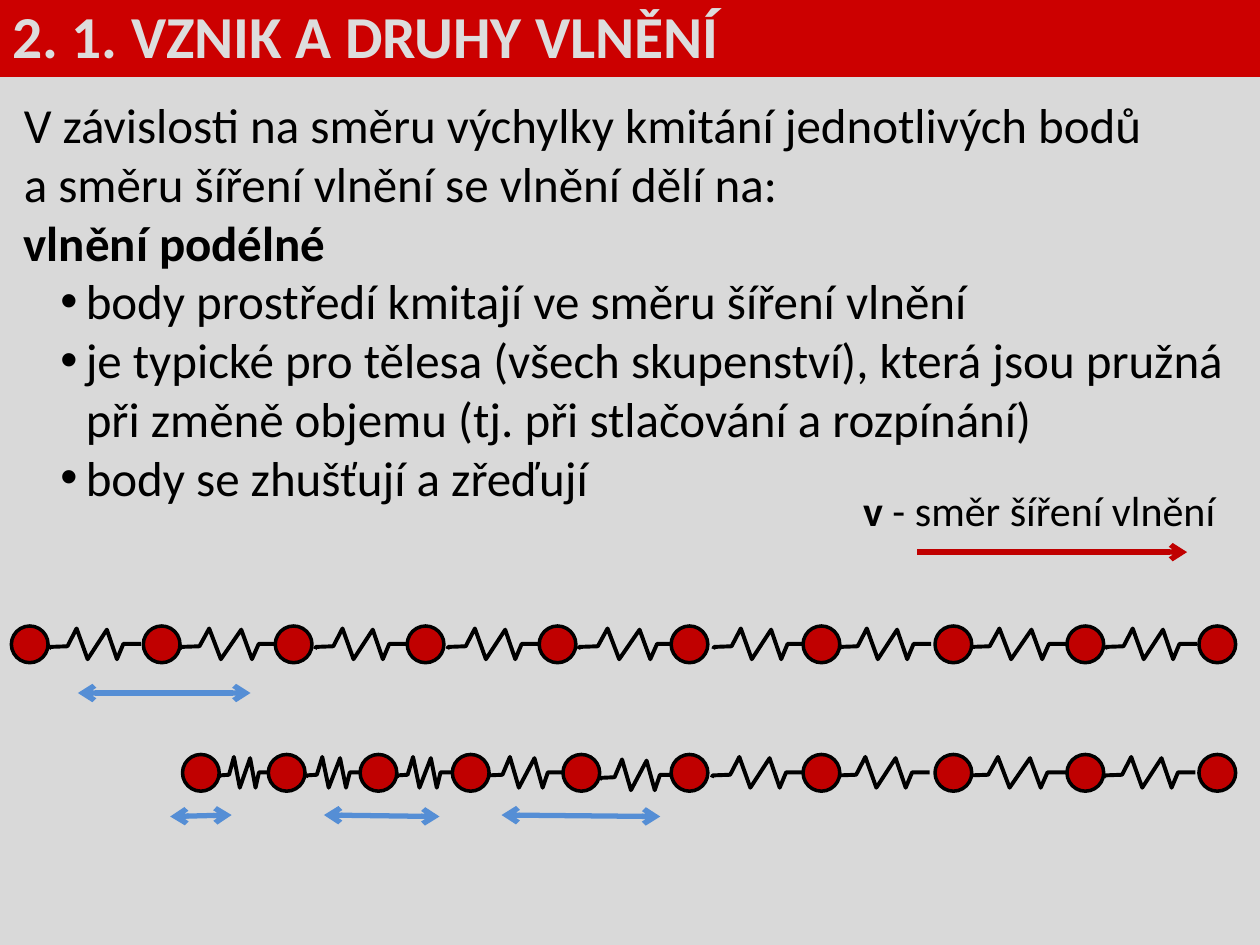
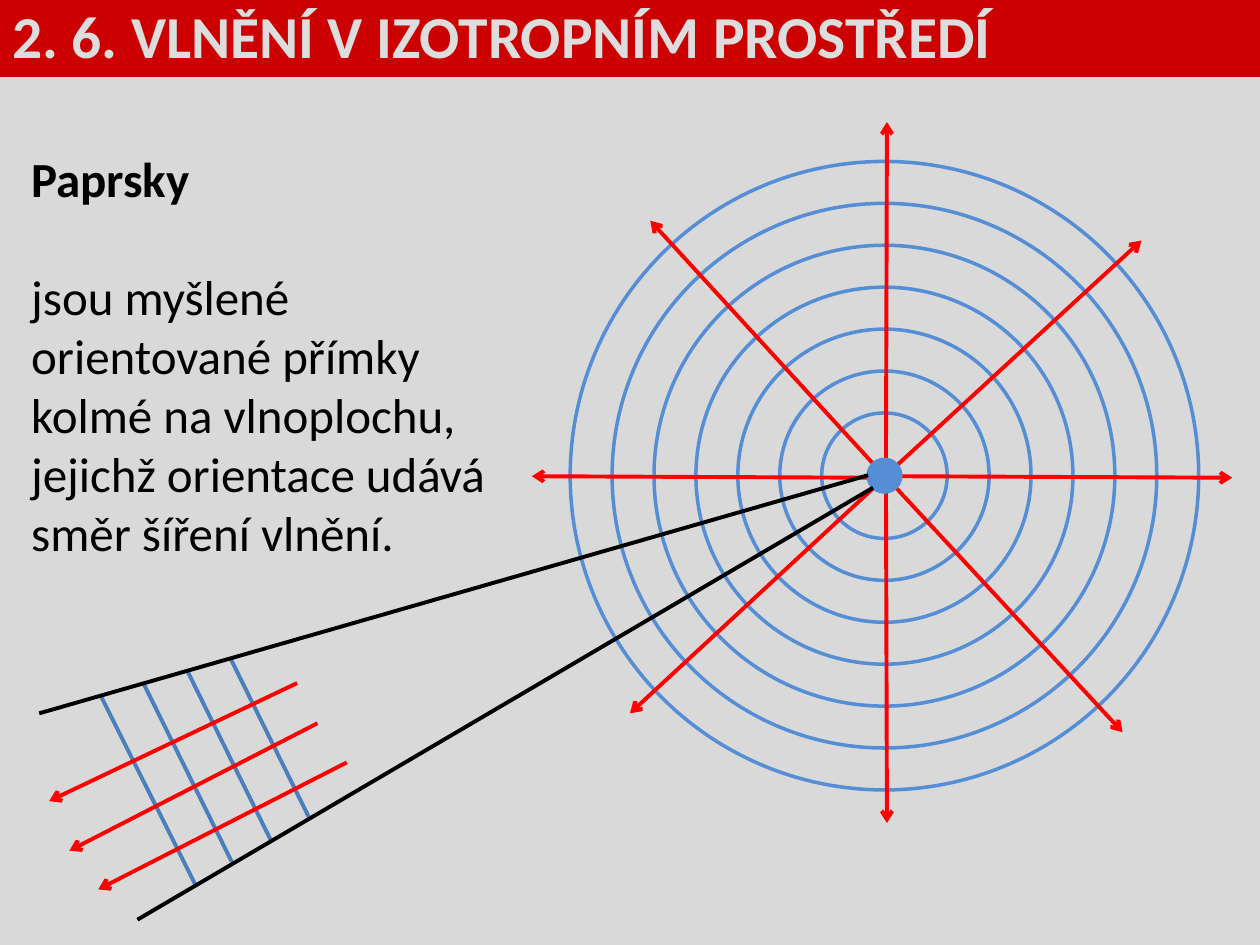
from lxml.etree import SubElement
from pptx import Presentation
from pptx.dml.color import RGBColor
from pptx.enum.shapes import MSO_CONNECTOR as Link, MSO_SHAPE as Preset
from pptx.enum.text import MSO_ANCHOR as Anchor, PP_ALIGN as Align
from pptx.oxml.ns import qn
from pptx.util import Cm, Pt

COLORS = {
    "page": "D9D9D9", "band": "CC0000", "title": "DDDDDD", "text": "000000",
    "ball": "C00000", "wave": "558ED5", "front": "4B7EBC", "ray": "FF0000",
}
FONT = "Calibri"
BODY_SIZE = 28

# One spring, as fractions of its width and height
SPRING = [(0, .67), (.01, .6), (.2, .58), (.3, 0), (.42, 1),
          (.63, .04), (.74, 1), (.81, .5), (1, .5)]
SPRING_HEIGHT = 0.62
BALL_SIZE = 0.74
# Offset and width of the springs in a relaxed run of three
RELAXED = [(0, 1.85), (2.64, 1.96), (5.36, 1.85)]


def rgb(name):
    return RGBColor.from_string(COLORS[name])


class Sketch:
    """Holds the deck, its style and the page being drawn; lengths are in cm."""

    def __init__(self):
        self.deck = Presentation()
        self.deck.slide_width, self.deck.slide_height = Cm(25.4), Cm(19.05)
        self.page = None

    def new_page(self, title):
        self.page = self.deck.slides.add_slide(self.deck.slide_layouts[6])
        fill = self.page.background.fill
        fill.solid()
        fill.fore_color.rgb = rgb("page")
        band = self.shape(Preset.RECTANGLE, 0, -0.15, 25.4, 1.7, fill="band")
        frame = band.text_frame
        frame.word_wrap = True
        frame.vertical_anchor = Anchor.MIDDLE
        para = frame.paragraphs[0]
        para.alignment = Align.LEFT
        self.span(para, title, 34, bold=True, color="title")

    def shape(self, preset, left, top, width, height, fill=None, line=None):
        shape = self.page.shapes.add_shape(
            preset, Cm(left), Cm(top), Cm(width), Cm(height))
        return self.paint(shape, fill, line, 2)

    def paint(self, shape, fill, line, weight):
        shape.shadow.inherit = False
        if fill:
            shape.fill.solid()
            shape.fill.fore_color.rgb = rgb(fill)
        else:
            shape.fill.background()
        if line:
            shape.line.color.rgb = rgb(line)
            shape.line.width = Pt(weight)
        else:
            shape.line.fill.background()
        return shape

    def circle(self, x, y, size, fill=None, line="text"):
        """Draw a circle around the centre x, y."""
        return self.shape(Preset.OVAL, x - size / 2, y - size / 2, size, size, fill, line)

    def spring(self, left, top, width):
        points = [(Cm(left + x * width), Cm(top + y * SPRING_HEIGHT)) for x, y in SPRING]
        builder = self.page.shapes.build_freeform(*points[0])
        builder.add_line_segments(points[1:], close=False)
        self.paint(builder.convert_to_shape(), None, "text", 2.25)

    def chain(self, y, ball_centers, springs):
        """Draw springs (left, width, drop) and the balls they join."""
        for left, width, drop in springs:
            self.spring(left, y - 0.32 + drop, width)
        for x in ball_centers:
            self.circle(x, y, BALL_SIZE, fill="ball")

    def line(self, ends, color, weight=2.25, heads=()):
        """Draw a line; heads names its arrowed ends, headEnd before tailEnd."""
        line = self.page.shapes.add_connector(Link.STRAIGHT, *map(Cm, ends))
        line.line.color.rgb = rgb(color)
        line.line.width = Pt(weight)
        outline = line.line._get_or_add_ln()
        for head in heads:
            SubElement(outline, qn("a:" + head)).set("type", "arrow")
        SubElement(line._element.spPr, qn("a:effectLst"))

    def arrow(self, ends, color, weight=2.25):
        self.line(ends, color, weight, ["tailEnd"])

    def span(self, para, text, size=BODY_SIZE, bold=False, color="text"):
        span = para.add_run()
        span.text = text
        font = span.font
        font.name, font.size, font.bold = FONT, Pt(size), bold
        font.color.rgb = rgb(color)

    def textbox(self, left, top, width, height):
        box = self.page.shapes.add_textbox(Cm(left), Cm(top), Cm(width), Cm(height))
        box.text_frame.word_wrap = True
        return box.text_frame

    def bullet(self, frame, text):
        para = frame.add_paragraph()
        para.level = 1
        props = para._p.get_or_add_pPr()
        props.set("marL", str(Cm(1.25)))
        props.set("indent", str(Cm(-0.51)))
        SubElement(props, qn("a:buFont")).set("typeface", "Arial")
        SubElement(props, qn("a:buChar")).set("char", "•")
        self.span(para, text)


def relaxed_springs(start):
    return [(start + offset, width, 0) for offset, width in RELAXED]


def draw_longitudinal_wave(sketch):
    sketch.new_page("2. 1. VZNIK A DRUHY VLNĚNÍ")
    frame = sketch.textbox(0.23, 1.78, 25.17, 8.64)
    para = frame.paragraphs[0]
    sketch.span(para, "V závislosti na směru výchylky kmitání jednotlivých bodů ")
    para.add_line_break()
    sketch.span(para, "a směru šíření vlnění se vlnění dělí na:")
    sketch.span(frame.add_paragraph(), "vlnění podélné", bold=True)
    for text in (
        "body prostředí kmitají ve směru šíření vlnění",
        "je typické pro tělesa (všech skupenství), která jsou pružná "
        "při změně objemu (tj. při stlačování a rozpínání)",
        "body se zhušťují a zřeďují",
    ):
        sketch.bullet(frame, text)

    para = sketch.textbox(17.15, 9.65, 9.5, 1.27).paragraphs[0]
    sketch.span(para, "v", 24, bold=True)
    sketch.span(para, " - směr šíření vlnění", 24)
    sketch.arrow((18.49, 11.13, 23.93, 11.13), "ball", 3)

    resting = [0.6 + 2.66 * i for i in range(10)]
    sketch.chain(12.99, resting, [
        spring for start in (0.99, 9.02, 16.92) for spring in relaxed_springs(start)])

    squeezed = [4.05, 5.78, 7.63, 9.49, 11.72]
    tight_springs = [(4.42, 0.99, 0), (6.17, 1.09, 0), (8, 1.09, 0),
                     (9.83, 1.5, 0), (12.09, 1.5, 0.05), (14.35, 1.85, 0)]
    sketch.chain(15.58, squeezed + resting[5:], tight_springs + relaxed_springs(16.89))

    for swing in ((1.57, 13.97, 5.05, 13.97), (3.43, 16.46, 4.67, 16.43),
                  (6.53, 16.43, 8.86, 16.46), (10.11, 16.43, 13.31, 16.46)):
        sketch.line(swing, "wave", 3, ["headEnd", "tailEnd"])


def draw_rays(sketch):
    sketch.new_page("2. 6. VLNĚNÍ V IZOTROPNÍM PROSTŘEDÍ")
    frame = sketch.textbox(0.38, 2.87, 10.74, 8.64)
    para = frame.paragraphs[0]
    para.space_after = Pt(34)
    sketch.span(para, "Paprsky ", bold=True)
    sketch.span(frame.add_paragraph(),
                "jsou myšlené orientované přímky kolmé na vlnoplochu, "
                "jejichž orientace udává směr šíření vlnění.")

    source = (17.83, 9.59)
    for i in range(7):
        sketch.circle(*source, 2.53 + 1.69 * i, line="wave")
    for ray in (
        (17.86, 9.25, 17.88, 2.46), (17.5, 9.63, 10.72, 9.6),
        (18.06, 9.6, 24.84, 9.63), (17.86, 9.8, 17.88, 16.59),
        (18.06, 9.4, 23.01, 4.85), (17.65, 9.8, 12.7, 14.38),
        (18.06, 9.83, 22.63, 14.76), (17.65, 9.4, 13.11, 4.45),
    ):
        sketch.arrow(ray, "ray")
    sketch.circle(*source, 0.66, fill="wave", line="wave")

    for wavefront in ((4.65, 13.28, 6.22, 16.46), (3.76, 13.49, 5.46, 16.94),
                      (2.9, 13.79, 4.67, 17.37), (2.03, 14.02, 3.96, 17.88)):
        sketch.line(wavefront, "front")
    for edge in ((17.5, 9.58, 0.79, 14.38), (17.6, 9.83, 2.77, 18.54)):
        sketch.line(edge, "text")
    for ray in ((6.99, 15.37, 1.98, 17.93), (5.99, 13.77, 0.99, 16.15),
                (6.4, 14.58, 1.4, 17.15)):
        sketch.arrow(ray, "ray")


def main():
    sketch = Sketch()
    draw_longitudinal_wave(sketch)
    draw_rays(sketch)
    sketch.deck.save("out.pptx")


if __name__ == "__main__":
    main()
